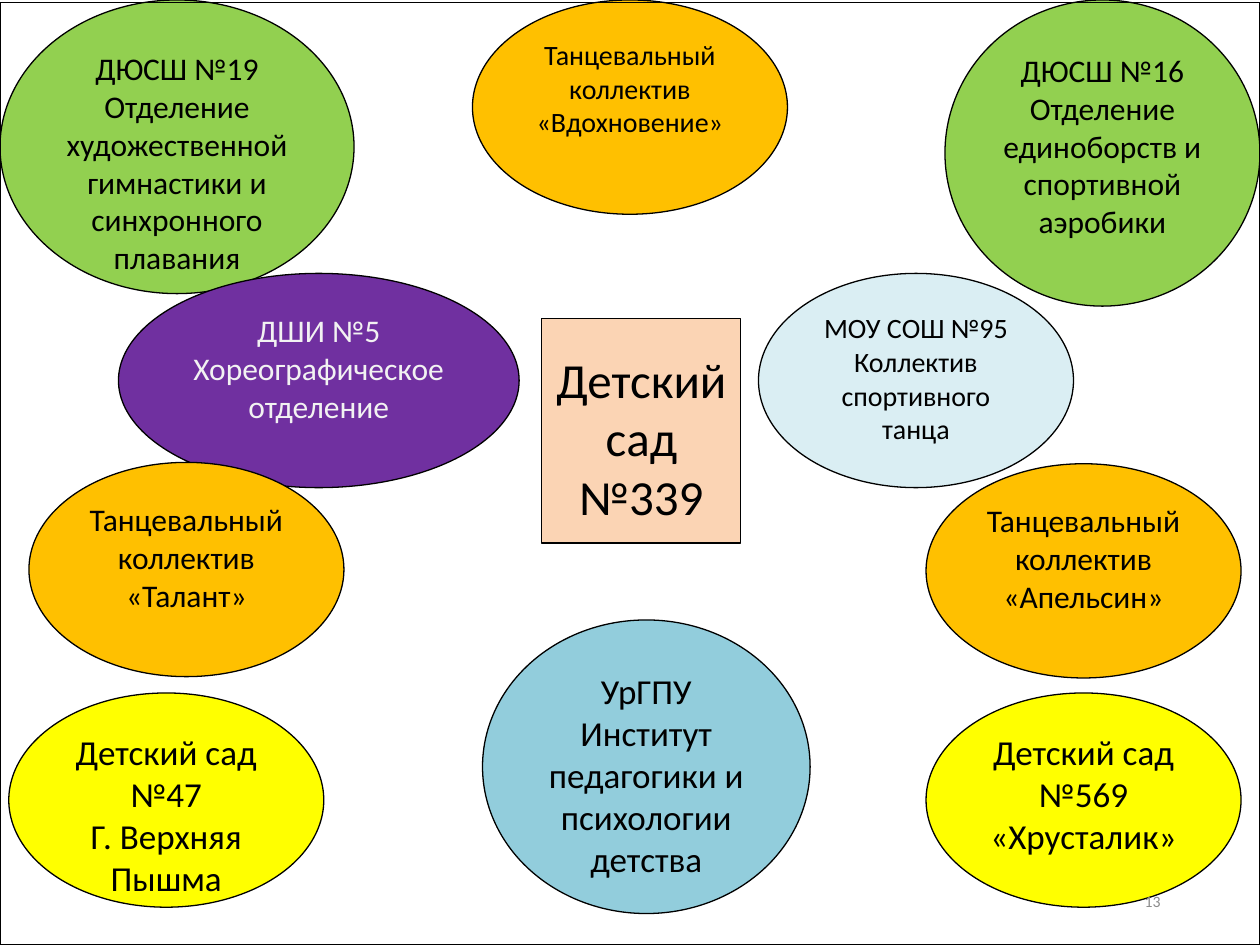
from pptx import Presentation
from pptx.dml.color import RGBColor
from pptx.enum.shapes import MSO_SHAPE
from pptx.enum.text import MSO_ANCHOR, PP_ALIGN
from pptx.util import Inches, Pt

OVAL, RECT = MSO_SHAPE.OVAL, MSO_SHAPE.RECTANGLE
TOP, MIDDLE = MSO_ANCHOR.TOP, MSO_ANCHOR.MIDDLE
CENTER, RIGHT = PP_ALIGN.CENTER, PP_ALIGN.RIGHT

THEME = {
    "font": "Calibri",
    "text": "000000", "light": "F2F2F2", "muted": "8C8C8C", "line": "000000",
    "center": "FBD4B4", "sport": "92D050", "school": "DAEEF3", "arts": "7030A0",
    "university": "92CDDC", "dance": "FFC000", "kindergarten": "FFFF00",
    "title": 28, "large": 20, "medium": 18, "small": 16, "number": 9,
    "outline": 0.75,
}

# Places are (left, top, width, height) in percent of the slide
OVAL_SIZE = (25, 22.67)
CENTER_NAME = "Детский сад №339"
CENTER_PLACE = (43, 33.73, 15.8, 23.73)
CENTER_TOP_INSET = 0.24
FRAME_PLACE = (0, 0.27, 100, 99.73)
PAGE_NUMBER = "13"
PAGE_NUMBER_PLACE = (70.6, 92.67, 22.5, 5.33)

# Partners from back to front: kind, type size, place, lines
PARTNERS = [
    ("sport", "medium", (0, 0, 28.1, 31.07),
     ["ДЮСШ №19", "Отделение художественной гимнастики и синхронного плавания"]),
    ("sport", "medium", (75, 0, 25, 32.4),
     ["ДЮСШ №16", "Отделение единоборств и спортивной аэробики"]),
    ("school", "small", (60.2, 28.93, *OVAL_SIZE),
     ["МОУ СОШ №95", "Коллектив спортивного танца"]),
    ("arts", "medium", (9.4, 28.93, 31.8, 22.67),
     ["ДШИ №5", "Хореографическое отделение"]),
    ("university", "large", (38.3, 65.6, 26, 31.07),
     ["УрГПУ", "Институт педагогики и психологии детства"]),
    ("dance", "medium", (2.3, 48.93, *OVAL_SIZE),
     ["Танцевальный", "коллектив", "«Талант»"]),
    ("dance", "small", (37.5, 0, *OVAL_SIZE),
     ["Танцевальный", "коллектив", "«Вдохновение»"]),
    ("dance", "medium", (73.5, 49.07, *OVAL_SIZE),
     ["Танцевальный", "коллектив", "«Апельсин»"]),
    ("kindergarten", "large", (73.5, 73.33, *OVAL_SIZE),
     ["Детский сад №569", "«Хрусталик»"]),
    ("kindergarten", "large", (0.7, 73.33, *OVAL_SIZE),
     ["Детский сад №47", "Г. Верхняя Пышма"]),
]

prs = Presentation()
prs.slide_width, prs.slide_height = Inches(10), Inches(7.5)
slide = prs.slides.add_slide(prs.slide_layouts[6])


def to_slide(place):
    sides = (prs.slide_width, prs.slide_height) * 2
    return [round(side * share / 100) for side, share in zip(sides, place)]


def write(frame, lines, size, color="text", align=CENTER, anchor=TOP):
    frame.word_wrap = True
    frame.vertical_anchor = anchor
    for i, line in enumerate(lines):
        paragraph = frame.paragraphs[0] if i == 0 else frame.add_paragraph()
        paragraph.text = line
        paragraph.alignment = align
        paragraph.font.name = THEME["font"]
        paragraph.font.size = Pt(THEME[size])
        paragraph.font.color.rgb = RGBColor.from_string(THEME[color])


def add_outlined(preset, place, fill=None):
    shape = slide.shapes.add_shape(preset, *to_slide(place))
    shape.shadow.inherit = False
    if fill:
        shape.fill.solid()
        shape.fill.fore_color.rgb = RGBColor.from_string(THEME[fill])
    else:
        shape.fill.background()
    shape.line.color.rgb = RGBColor.from_string(THEME["line"])
    shape.line.width = Pt(THEME["outline"])
    return shape


# Kindergarten in the middle
center = add_outlined(RECT, CENTER_PLACE, "center")
center.text_frame.margin_top = Inches(CENTER_TOP_INSET)
write(center.text_frame, [CENTER_NAME], "title")

# Partners around it
for kind, size, place, lines in PARTNERS:
    partner = add_outlined(OVAL, place, kind)
    write(partner.text_frame, lines, size, "light" if kind == "arts" else "text")

# Slide frame and page number
add_outlined(RECT, FRAME_PLACE)
page_number = slide.shapes.add_textbox(*to_slide(PAGE_NUMBER_PLACE))
write(page_number.text_frame, [PAGE_NUMBER], "number", "muted", RIGHT, MIDDLE)

prs.save("out.pptx")
